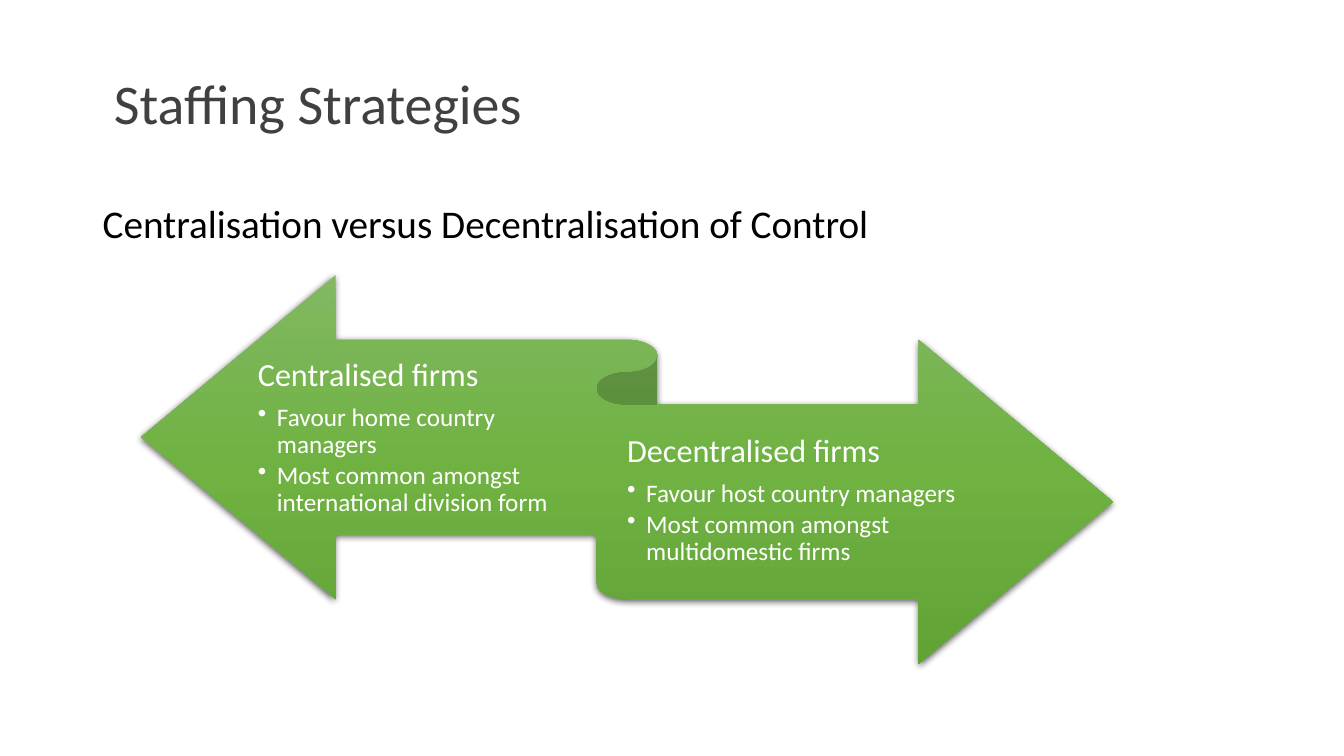
"""Build the Staffing Strategies slide with its two-way ribbon."""
from copy import deepcopy

from lxml.etree import SubElement
from pptx import Presentation
from pptx.dml.color import RGBColor
from pptx.enum.shapes import MSO_SHAPE
from pptx.enum.text import MSO_ANCHOR
from pptx.oxml.ns import qn
from pptx.util import Cm, Pt

FONT = "Calibri"
HEADING = "Staffing Strategies"
SUBHEADING = "Centralisation versus Decentralisation of Control"
FIRMS = [
    {"name": "Centralised firms", "left": 0.12, "top": 0.175, "width": 0.33,
     "traits": ["Favour home country managers",
                "Most common amongst international division form"]},
    {"name": "Decentralised firms", "left": 0.5, "top": 0.335, "width": 0.39,
     "traits": ["Favour host country managers",
                "Most common amongst multidomestic firms"]},
]
RIBBON = (3.56, 6.93, 24.49, 9.8)
RIBBON_STOPS = [(0, "81B861"), (0.5, "6FB242"), (1, "62A336")]
FIRM_HEIGHT = 0.49
BULLET_INDENT = Cm(0.48)


def color(hex_code):
    return RGBColor.from_string(hex_code)


def add_frame(box, insets, anchor):
    frame = slide.shapes.add_textbox(*map(Cm, box)).text_frame
    frame.word_wrap = True
    frame.vertical_anchor = anchor
    (frame.margin_left, frame.margin_top,
     frame.margin_right, frame.margin_bottom) = map(Cm, insets)
    return frame


def write(paragraph, words, size, hex_code, spacing=0.9, after=0):
    paragraph.line_spacing = spacing
    paragraph.space_after = Pt(after)
    run = paragraph.add_run()
    run.text = words
    run.font.name = FONT
    run.font.size = Pt(size)
    run.font.color.rgb = color(hex_code)


def add_bullet(paragraph):
    properties = paragraph._p.get_or_add_pPr()
    properties.set("marL", str(BULLET_INDENT))
    properties.set("indent", str(-BULLET_INDENT))
    SubElement(properties, qn("a:buChar"), char="•")


def add_ribbon():
    ribbon = slide.shapes.add_shape(MSO_SHAPE.LEFT_RIGHT_RIBBON, *map(Cm, RIBBON))
    ribbon.line.fill.background()
    ribbon.fill.gradient()
    ribbon.fill.gradient_angle = 270
    stop_list = ribbon._element.spPr.find(".//" + qn("a:gsLst"))
    stop_list.insert(1, deepcopy(stop_list[0]))
    for stop, (position, hex_code) in zip(ribbon.fill.gradient_stops, RIBBON_STOPS):
        stop.position = position
        stop.color.rgb = color(hex_code)
    ribbon.shadow.inherit = False
    effects = ribbon._element.spPr.find(qn("a:effectLst"))
    shadow = SubElement(effects, qn("a:outerShdw"), blurRad=str(Pt(4.5)),
                        dist=str(Pt(1.5)), dir="5400000", rotWithShape="0")
    shade = SubElement(shadow, qn("a:srgbClr"), val="000000")
    SubElement(shade, qn("a:alpha"), val="63000")


def add_firm(firm):
    left, top, width, height = RIBBON
    box = (left + firm["left"] * width, top + firm["top"] * height,
           firm["width"] * width, FIRM_HEIGHT * height)
    frame = add_frame(box, (0, 0.23, 0, 0.25), MSO_ANCHOR.MIDDLE)
    write(frame.paragraphs[0], firm["name"], 23, "FFFFFF", after=8)
    for trait in firm["traits"]:
        paragraph = frame.add_paragraph()
        add_bullet(paragraph)
        write(paragraph, trait, 18, "FFFFFF", after=2.7)


deck = Presentation()
deck.slide_width, deck.slide_height = Cm(33.87), Cm(19.05)
slide = deck.slides.add_slide(deck.slide_layouts[6])

subheading = add_frame((2.34, 4.11, 24.71, 3.18), (0.25, 0.13, 0.25, 0.13),
                       MSO_ANCHOR.MIDDLE)
write(subheading.paragraphs[0], SUBHEADING, 28, "000000")
heading = add_frame((2.87, 1.73, 23.67, 2.39), (0, 0, 0, 0), MSO_ANCHOR.TOP)
write(heading.paragraphs[0], HEADING, 40, "404041", spacing=1.0)
add_ribbon()
for firm in FIRMS:
    add_firm(firm)

deck.save("out.pptx")
